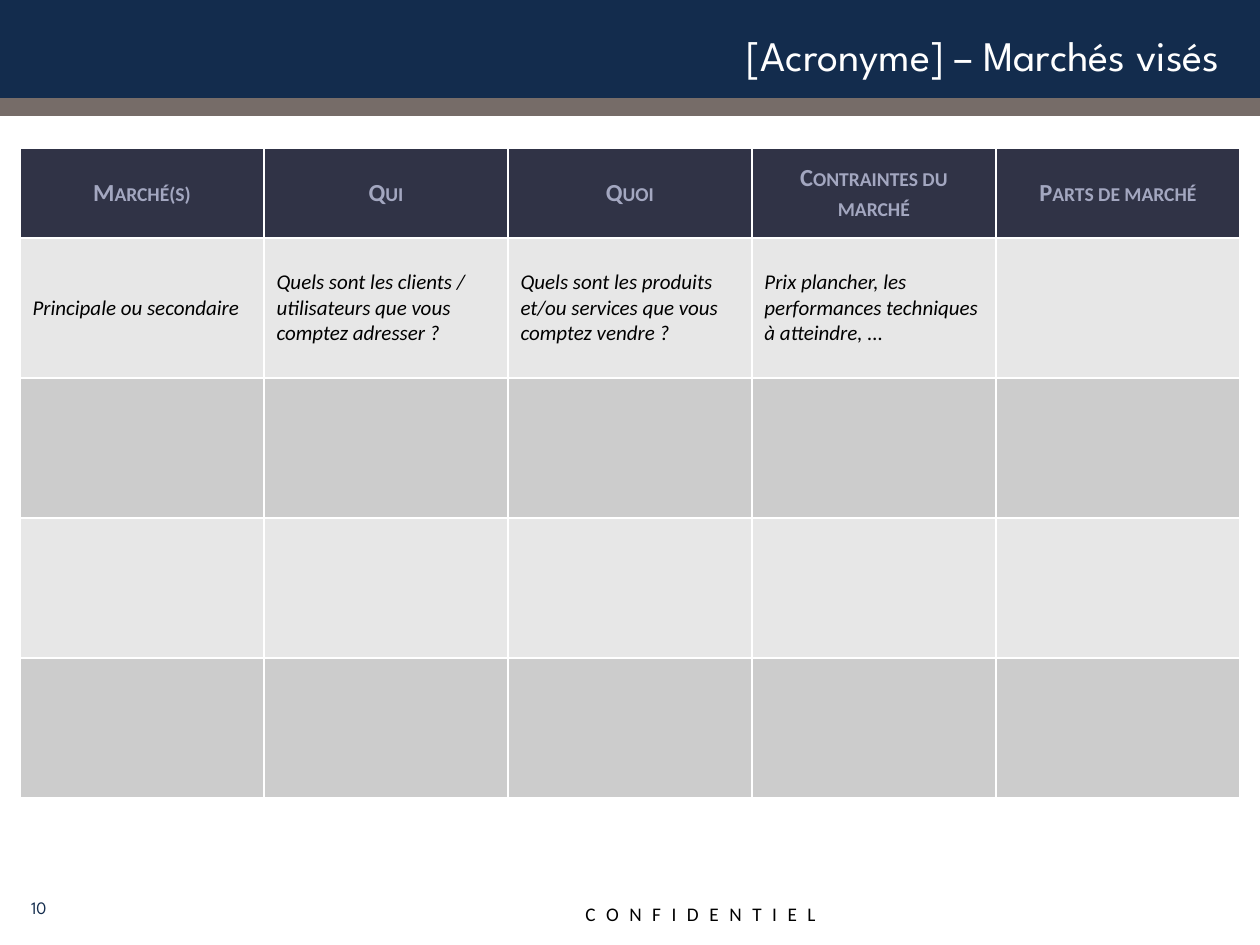
from lxml.etree import SubElement
from pptx import Presentation
from pptx.dml.color import RGBColor
from pptx.enum.shapes import MSO_SHAPE
from pptx.enum.text import MSO_ANCHOR, PP_ALIGN
from pptx.oxml.ns import qn
from pptx.util import Emu, Pt

NAVY, TAUPE, WHITE, BLACK = "132C4D", "766C68", "FFFFFF", "000000"
HEADER_FILL, HEADER_TEXT = "303346", "A3A7C0"
BAND_FILLS = ["E7E7E7", "CCCCCC"]
HEADINGS = ["Marché(s)", "Qui", "Quoi", "Contraintes du marché", "Parts de marché"]
HINTS = [
    "Principale ou secondaire",
    "Quels sont les clients / utilisateurs que vous comptez adresser ?",
    "Quels sont les produits et/ou services que vous comptez vendre ?",
    "Prix plancher, les performances techniques à atteindre, ...",
    "",
]
TITLE_FONT = {"name": "League Spartan", "size": Pt(24)}
NUMBER_FONT = {"name": "League Spartan", "size": Pt(10)}
FOOTER_FONT = {"name": "Calibri", "size": Pt(11)}
HEADING_FONT = {"name": "Calibri", "size": Pt(14), "bold": True}
HINT_FONT = {"name": "Calibri", "size": Pt(12), "bold": False, "italic": True}


def px(n):
    return Emu(round(n * 914400 / 126))


def rgb(value):
    return RGBColor.from_string(value)


def write(tf, text, font, color, align=PP_ALIGN.LEFT):
    """Put one formatted run in the first paragraph and return it."""
    p = tf.paragraphs[0]
    p.alignment = align
    r = p.add_run()
    r.text = text
    for name, value in font.items():
        setattr(r.font, name, value)
    r.font.color.rgb = rgb(color)
    return r


def add_bar(s, x, y, w, h, color):
    sp = s.shapes.add_shape(MSO_SHAPE.RECTANGLE, px(x), px(y), px(w), px(h))
    sp.shadow.inherit = False
    sp.fill.solid()
    sp.fill.fore_color.rgb = rgb(color)
    sp.line.fill.background()


def add_text(s, x, y, w, h, text, font, color, align=PP_ALIGN.LEFT,
             anchor=MSO_ANCHOR.MIDDLE, wrap=True):
    tf = s.shapes.add_textbox(px(x), px(y), px(w), px(h)).text_frame
    tf.word_wrap = wrap
    tf.vertical_anchor = anchor
    return write(tf, text, font, color, align)


def add_banner(s, x, y, w, h):
    stripe = 18
    add_bar(s, x, y, w, h - 2, NAVY)
    add_bar(s, x, y + h - stripe, w, stripe, TAUPE)
    add_text(s, x + 19, y + 18, w - 47, 73, "[Acronyme] – Marchés visés",
             TITLE_FONT, WHITE, PP_ALIGN.RIGHT)


def set_borders(cell, color, width):
    pr = cell._tc.get_or_add_tcPr()
    for i, side in enumerate(("lnL", "lnR", "lnT", "lnB")):
        ln = pr.makeelement(qn(f"a:{side}"), {"w": str(width)})
        fill = SubElement(ln, qn("a:solidFill"))
        SubElement(fill, qn("a:srgbClr"), val=color)
        pr.insert(i, ln)


def add_market_table(s, x, y, w, h):
    bands, header_h = 4, 90
    table = s.shapes.add_table(bands + 1, len(HEADINGS),
                               px(x), px(y), px(w), px(h)).table
    for col in table.columns:
        col.width = px(w / len(HEADINGS))
    for i, row in enumerate(table.rows):
        row.height = px((h - header_h) / bands if i else header_h)
        for j, cell in enumerate(row.cells):
            cell.vertical_anchor = MSO_ANCHOR.MIDDLE
            cell.fill.solid()
            cell.fill.fore_color.rgb = rgb(BAND_FILLS[(i - 1) % 2] if i else HEADER_FILL)
            set_borders(cell, WHITE, Pt(1))
            if i == 0:
                r = write(cell.text_frame, HEADINGS[j], HEADING_FONT,
                          HEADER_TEXT, PP_ALIGN.CENTER)
                r.font._element.set("cap", "small")
            elif i == 1 and HINTS[j]:
                write(cell.text_frame, HINTS[j], HINT_FONT, BLACK)


def add_footer(s, x, y, w, h):
    add_text(s, x - 5, y, 64, h, "10", NUMBER_FONT, NAVY, PP_ALIGN.RIGHT)
    r = add_text(s, x + 573, y + 14, 268, h - 14, "CONFIDENTIEL", FOOTER_FONT,
                 BLACK, anchor=MSO_ANCHOR.TOP, wrap=False)
    r.font._element.set("spc", "600")


def main():
    prs = Presentation()
    prs.slide_width, prs.slide_height = px(1260), px(945)
    s = prs.slides.add_slide(prs.slide_layouts[6])
    add_banner(s, 0, 0, 1260, 116)
    add_market_table(s, 20, 148, 1220, 650)
    add_footer(s, 0, 882, 1260, 51)
    prs.save("out.pptx")


if __name__ == "__main__":
    main()
